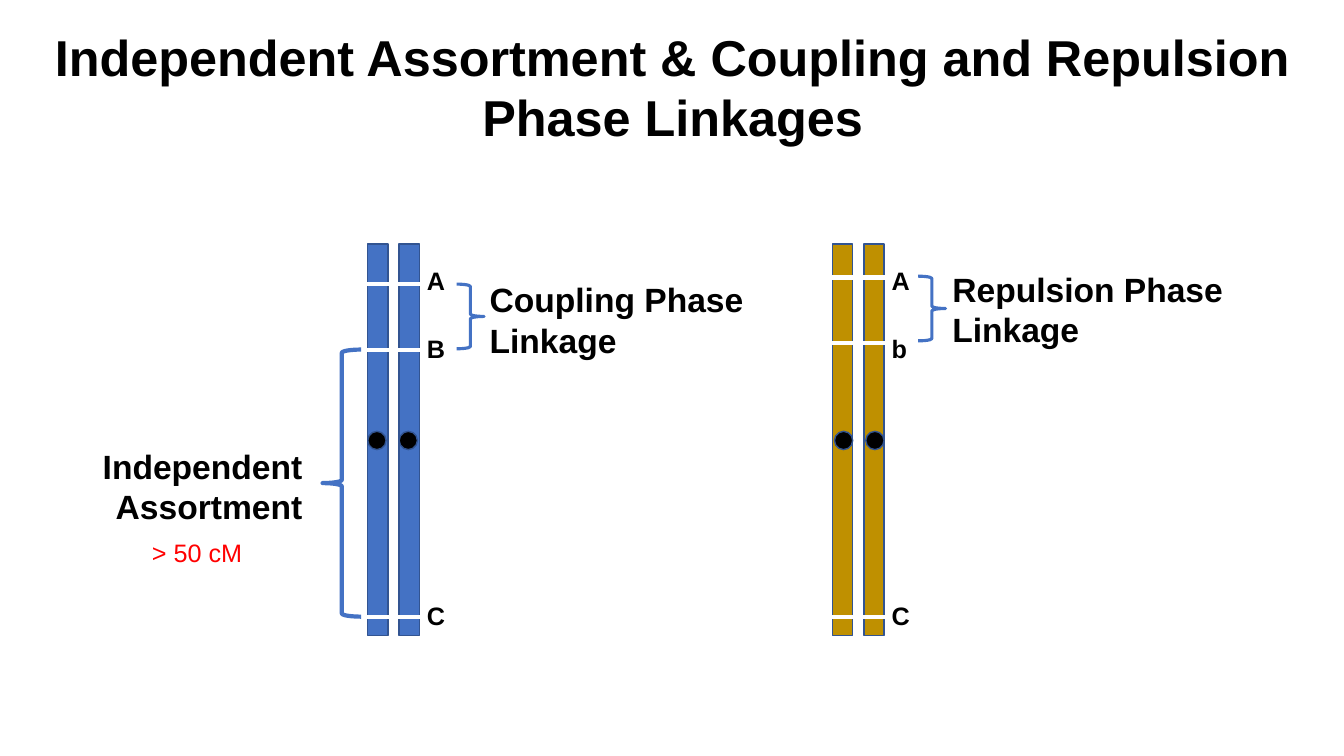
from pptx import Presentation
from pptx.dml.color import RGBColor
from pptx.enum.shapes import MSO_CONNECTOR, MSO_SHAPE
from pptx.enum.text import MSO_ANCHOR, PP_ALIGN
from pptx.oxml.ns import qn
from pptx.util import Cm, Pt
from lxml.etree import SubElement

HUES = {"blue": "4472C4", "gold": "BF9000", "edge": "325491",
        "black": "000000", "white": "FFFFFF", "red": "FF0000"}


def hue(name):
    return RGBColor.from_string(HUES[name])


class Board:
    """Holds the text style and the slide being drawn; lengths are in cm."""
    font = {"name": "Arial", "bold": True}

    def __init__(self, deck):
        self.slide = deck.slides.add_slide(deck.slide_layouts[5])
        self.shapes = self.slide.shapes

    def put(self, frame, text, size, color="black", align=PP_ALIGN.LEFT, **extra):
        frame.word_wrap = True
        para = frame.paragraphs[0]
        para.alignment = align
        para.line_spacing = 1.0
        run = para.add_run()
        run.text = text
        look = {**self.font, "size": Pt(size), **extra}
        for key, value in look.items():
            setattr(run.font, key, value)
        run.font.color.rgb = hue(color)

    def title(self, text, box, size):
        head = self.shapes.title
        for key, value in zip(("left", "top", "width", "height"), box):
            setattr(head, key, Cm(value))
        head.text_frame.vertical_anchor = MSO_ANCHOR.MIDDLE
        self.put(head.text_frame, text, size, align=PP_ALIGN.CENTER)

    def label(self, text, box, size=18, **style):
        frame = self.shapes.add_textbox(*map(Cm, box)).text_frame
        self.put(frame, text, size, **style)

    def shape(self, kind, box, fill=None, line="edge", width=1):
        item = self.shapes.add_shape(kind, *map(Cm, box))
        item.shadow.inherit = False
        if fill:
            item.fill.solid()
            item.fill.fore_color.rgb = hue(fill)
        else:
            item.fill.background()
        item.line.color.rgb = hue(line)
        item.line.width = Pt(width)

    def brace(self, kind, box, width=2.25):
        self.shape(kind, box, line="blue", width=width)

    def mark(self, left, top, span):
        ends = (left, top, left + span, top)
        line = self.shapes.add_connector(MSO_CONNECTOR.STRAIGHT, *map(Cm, ends))
        line.line.color.rgb = hue("white")
        line.line.width = Pt(3)
        SubElement(line._element.spPr, qn("a:effectLst"))

    def pair(self, left, color, dot, genes, loci):
        """Draws two chromatids with centromeres, gene names and white loci."""
        gap = 0.79
        for i in range(2):
            self.shape(MSO_SHAPE.RECTANGLE, (left + i * gap, 6.15, 0.51, 9.86), color)
        for i in range(2):
            self.shape(MSO_SHAPE.OVAL, (dot + i * gap, 10.87, 0.46, 0.46), "black")
        for gene, top in zip(genes, (6.55, 8.28, 15.01)):
            self.label(gene, (left + 1.24, top, 1.02, 1.02))
        for top in loci:
            self.mark(left - 1.2, top, 2.65)


def main():
    deck = Presentation()
    deck.slide_width, deck.slide_height = Cm(33.87), Cm(19.05)
    board = Board(deck)
    board.title("Independent Assortment & Coupling and Repulsion Phase Linkages",
                (0.66, 0.51, 32.59, 3.33), 36)

    board.pair(20.98, "gold", 21.03, "AbC", (6.99, 8.64, 15.54))
    board.brace(MSO_SHAPE.RIGHT_BRACE, (23.14, 6.96, 0.69, 1.63))
    board.label("Repulsion Phase Linkage", (23.75, 6.65, 7.57, 2.31), 24)

    board.pair(9.27, "blue", 9.27, "ABC", (7.16, 8.81, 15.54))
    board.brace(MSO_SHAPE.RIGHT_BRACE, (11.51, 7.16, 0.69, 1.63))
    board.label("Coupling Phase Linkage", (12.09, 6.91, 6.99, 2.31), 24)

    board.brace(MSO_SHAPE.LEFT_BRACE, (8.13, 8.81, 0.97, 6.73), 3)
    board.label("Independent Assortment", (2.26, 11.1, 5.61, 2.31), 24,
                align=PP_ALIGN.RIGHT)
    board.label("> 50 cM", (3.58, 13.41, 3.45, 1.02), color="red", bold=False)
    deck.save("out.pptx")


if __name__ == "__main__":
    main()
